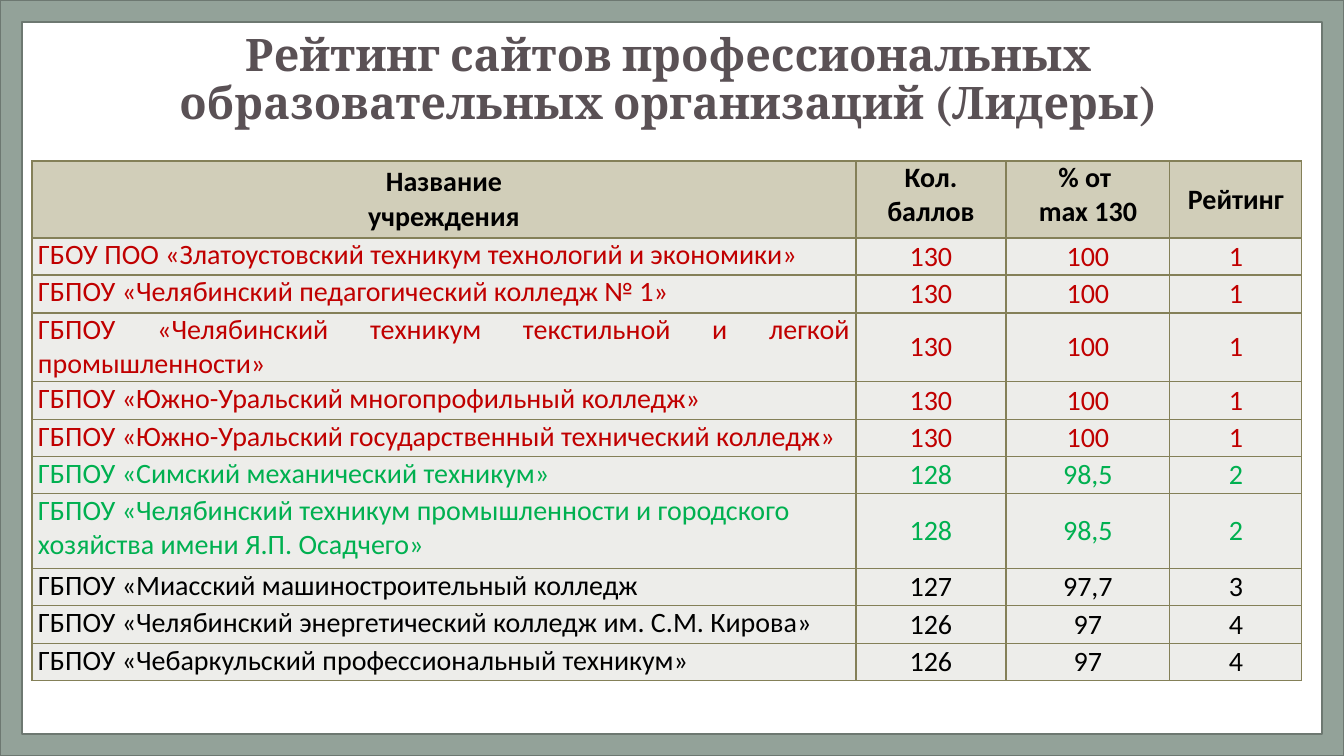
"""Builds the slide with the ranking of college websites."""
from lxml import etree
from pptx import Presentation
from pptx import util as u
from pptx.dml.color import RGBColor
from pptx.enum import shapes, text
from pptx.oxml.ns import qn

PX = 914400 / 100.8
BLACK = RGBColor(0x00, 0x00, 0x00)
RED = RGBColor(0xC0, 0x00, 0x00)
GREEN = RGBColor(0x00, 0xB0, 0x50)
TITLE = RGBColor(0x5A, 0x51, 0x55)
SAGE = RGBColor(0x93, 0xA2, 0x99)
SAGE_DARK = RGBColor(0x6D, 0x78, 0x71)
HEAD_FILL = RGBColor(0xD1, 0xCE, 0xB9)
BODY_FILL = RGBColor(0xED, 0xED, 0xEA)
BORDER = RGBColor(0x84, 0x80, 0x58)
LEFT, CENTER, JUSTIFY = text.PP_ALIGN.LEFT, text.PP_ALIGN.CENTER, text.PP_ALIGN.JUSTIFY
TOP, MIDDLE = text.MSO_ANCHOR.TOP, text.MSO_ANCHOR.MIDDLE

HEADING = "Рейтинг сайтов профессиональных образовательных организаций (Лидеры)"
HEADERS = [("Название\nучреждения", MIDDLE), ("Кол. баллов", TOP),
           ("% от \nmax 130", TOP), ("Рейтинг", MIDDLE)]
COLLEGES = [
    ("ГБОУ ПОО «Златоустовский техникум технологий и экономики»", "130", "100", "1", LEFT),
    ("ГБПОУ «Челябинский педагогический колледж № 1»", "130", "100", "1", LEFT),
    ("ГБПОУ «Челябинский техникум текстильной и легкой промышленности»", "130", "100", "1", JUSTIFY),
    ("ГБПОУ «Южно-Уральский многопрофильный колледж»", "130", "100", "1", JUSTIFY),
    ("ГБПОУ «Южно-Уральский государственный технический колледж»", "130", "100", "1", LEFT),
    ("ГБПОУ «Симский механический техникум»", "128", "98,5", "2", JUSTIFY),
    ("ГБПОУ «Челябинский техникум промышленности и городского хозяйства имени Я.П. Осадчего»",
     "128", "98,5", "2", LEFT),
    ("ГБПОУ «Миасский машиностроительный колледж", "127", "97,7", "3", LEFT),
    ("ГБПОУ «Челябинский энергетический колледж им. С.М. Кирова»", "126", "97", "4", LEFT),
    ("ГБПОУ «Чебаркульский профессиональный техникум»", "126", "97", "4", LEFT),
]
RANK_COLORS = {"1": RED, "2": GREEN}
COL_WIDTHS = [824, 150, 164, 132]
ROW_HEIGHTS = [77, 37, 38, 68, 38, 37, 37, 75, 37, 38, 37]


def px(n):
    return u.Emu(round(n * PX))


def style(tf, align, font, size, color, bold):
    for p in tf.paragraphs:
        p.alignment = align
        for r in p.runs:
            r.font.name, r.font.size = font, u.Pt(size)
            r.font.bold, r.font.color.rgb = bold, color


def add_borders(cell):
    tc_pr = cell._tc.get_or_add_tcPr()
    for i, side in enumerate(("lnL", "lnR", "lnT", "lnB")):
        ln = etree.Element(qn("a:" + side), w=str(u.Pt(1)))
        fill = etree.SubElement(ln, qn("a:solidFill"))
        etree.SubElement(fill, qn("a:srgbClr"), val=str(BORDER))
        tc_pr.insert(i, ln)


def fill_cell(cell, words, align, anchor, color, fill, bold=False):
    cell.text_frame.text = words
    cell.vertical_anchor = anchor
    cell.margin_left = cell.margin_right = px(6)
    cell.margin_top = cell.margin_bottom = 0
    cell.fill.solid()
    cell.fill.fore_color.rgb = fill
    style(cell.text_frame, align, "Calibri", 20, color, bold)
    add_borders(cell)


def add_title(s):
    title = s.shapes.title
    title.left, title.top, title.width, title.height = px(89), px(26), px(1159), px(110)
    tf = title.text_frame
    tf.text = HEADING
    tf.word_wrap = True
    tf.auto_size = text.MSO_AUTO_SIZE.NONE
    tf.vertical_anchor = MIDDLE
    tf.paragraphs[0].line_spacing = 0.9
    style(tf, CENTER, "Cambria", 32, TITLE, True)


def add_frame(s):
    sp = s.shapes.add_shape(shapes.MSO_SHAPE.FRAME, 0, 0, px(1344), px(756))
    sp.adjustments[0] = 0.03
    sp.adjustments[0] = 22 / 756
    sp.shadow.inherit = False
    sp.fill.solid()
    sp.fill.fore_color.rgb = SAGE
    sp.line.color.rgb = SAGE_DARK
    sp.line.width = u.Pt(1)
    s.shapes.title._element.addprevious(sp._element)


def add_ranking(s):
    table = s.shapes.add_table(len(ROW_HEIGHTS), len(COL_WIDTHS), px(32), px(161),
                               px(sum(COL_WIDTHS)), px(sum(ROW_HEIGHTS))).table
    table.first_row = table.horz_banding = False
    for col, width in zip(table.columns, COL_WIDTHS):
        col.width = px(width)
    for row, height in zip(table.rows, ROW_HEIGHTS):
        row.height = px(height)
    for c, (words, anchor) in enumerate(HEADERS):
        fill_cell(table.cell(0, c), words, CENTER, anchor, BLACK, HEAD_FILL, True)
    for r, (name, *values, align) in enumerate(COLLEGES, 1):
        color = RANK_COLORS.get(values[-1], BLACK)
        fill_cell(table.cell(r, 0), name, align, TOP, color, BODY_FILL)
        for c, value in enumerate(values, 1):
            fill_cell(table.cell(r, c), value, CENTER, MIDDLE, color, BODY_FILL)


def main():
    prs = Presentation()
    prs.slide_width, prs.slide_height = px(1344), px(756)
    s = prs.slides.add_slide(prs.slide_layouts[5])
    add_title(s)
    add_frame(s)
    add_ranking(s)
    prs.save("out.pptx")


if __name__ == "__main__":
    main()
